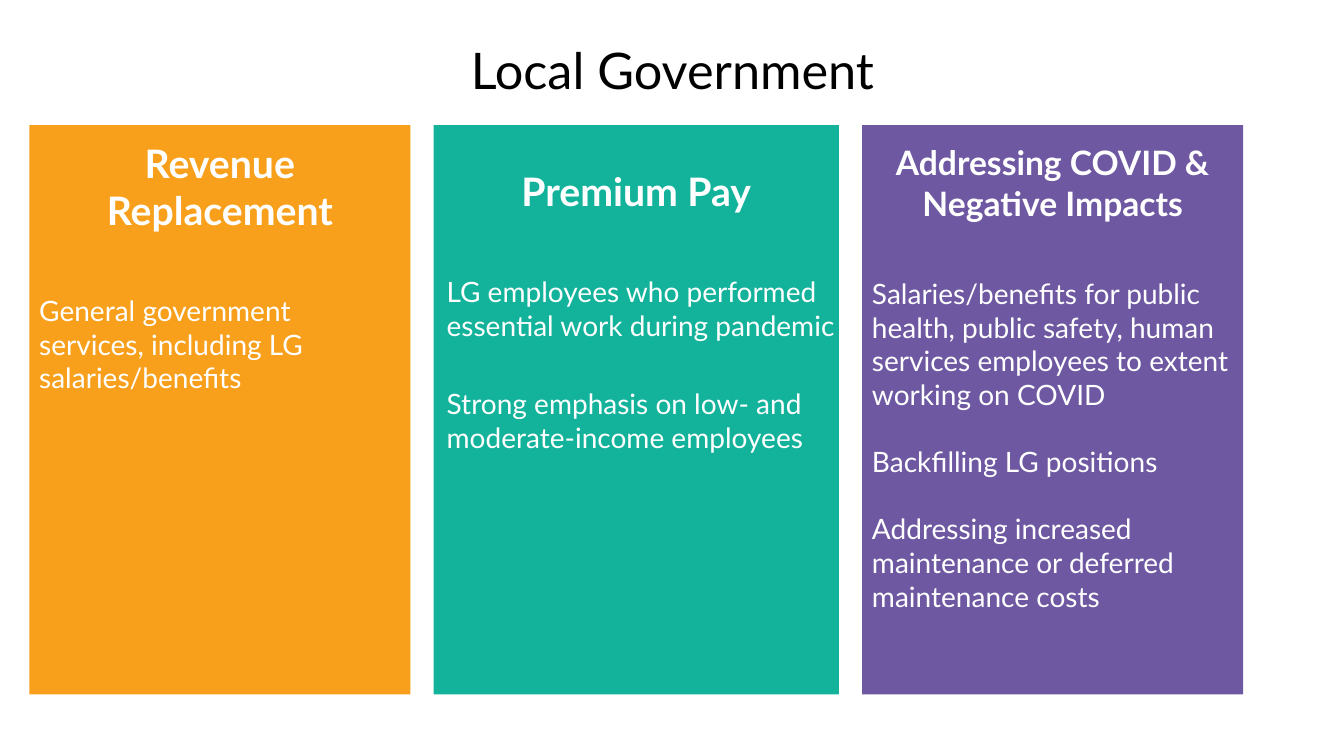
from pptx import Presentation
from pptx import util as u
from pptx.dml.color import RGBColor
from pptx.enum import shapes, text

FONT = "Lato"
HUES = {"ink": "000000", "paper": "FFFFFF", "gold": "F8A01B",
        "teal": "13B39B", "plum": "6E58A1"}
LEFT, TOP, HIGH, GAP = 0.29, 1.24, 5.65, 0.23

# Lengths are inches; "lead" and "space" are points before body paragraphs
CARDS = [
    dict(hue="gold", wide=3.78, head="Revenue Replacement", size=28,
         pad=0.14, side=0.1, dent=0, lead=43, space=24,
         body=["General government services, including LG salaries/benefits"]),
    dict(hue="teal", wide=4.02, head="Premium Pay", size=28,
         pad=0.42, side=0, dent=0.13, lead=43, space=32,
         body=["LG employees who performed essential work during pandemic",
               "Strong emphasis on low- and moderate-income employees"]),
    dict(hue="plum", wide=3.78, head="Addressing COVID & Negative Impacts",
         size=24, pad=0.17, side=0.1, dent=0, lead=38.4, space=24,
         body=["Salaries/benefits for public health, public safety, human "
               "services employees to extent working on COVID",
               "Backfilling LG positions",
               "Addressing increased maintenance or deferred maintenance costs"]),
]


def color(name):
    return RGBColor.from_string(HUES[name])


def write(para, words, size=20, hue="paper", bold=False, center=False,
          before=0, dent=0):
    """Fill one paragraph with formatted text."""
    para.alignment = text.PP_ALIGN.CENTER if center else text.PP_ALIGN.LEFT
    para.space_before = u.Pt(before)
    if dent:
        para._p.get_or_add_pPr().set("marL", str(u.Inches(dent)))
    run = para.add_run()
    run.text = words
    run.font.name = FONT
    run.font.size = u.Pt(size)
    run.font.bold = bold
    run.font.color.rgb = color(hue)


def setup(frame, anchor, side, top):
    """Set wrapping, anchor and insets of a text frame."""
    frame.word_wrap = True
    frame.auto_size = text.MSO_AUTO_SIZE.NONE
    frame.vertical_anchor = anchor
    frame.margin_left = frame.margin_right = u.Inches(side)
    frame.margin_top, frame.margin_bottom = u.Inches(top), u.Inches(0.05)


def add_title(slide, words):
    title = slide.shapes.title
    title.left, title.top = u.Inches(0.67), u.Inches(0.3)
    title.width, title.height = u.Inches(12), u.Inches(0.78)
    setup(title.text_frame, text.MSO_ANCHOR.MIDDLE, 0, 0.05)
    write(title.text_frame.paragraphs[0], words, size=36, hue="ink", center=True)


def add_card(slide, left, card):
    box = slide.shapes.add_shape(
        shapes.MSO_SHAPE.RECTANGLE, u.Inches(left), u.Inches(TOP),
        u.Inches(card["wide"]), u.Inches(HIGH))
    box.shadow.inherit = False
    box.fill.solid()
    box.fill.fore_color.rgb = color(card["hue"])
    box.line.fill.background()
    frame = box.text_frame
    setup(frame, text.MSO_ANCHOR.TOP, card["side"], card["pad"])
    write(frame.paragraphs[0], card["head"], size=card["size"],
          bold=True, center=True)
    for i, words in enumerate(card["body"]):
        write(frame.add_paragraph(), words, dent=card["dent"],
              before=card["space"] if i else card["lead"])


def main():
    deck = Presentation()
    deck.slide_width, deck.slide_height = u.Inches(13.33), u.Inches(7.5)
    slide = deck.slides.add_slide(deck.slide_layouts[5])
    add_title(slide, "Local Government")
    # Three columns, left to right
    left = LEFT
    for card in CARDS:
        add_card(slide, left, card)
        left += card["wide"] + GAP
    deck.save("out.pptx")


if __name__ == "__main__":
    main()
